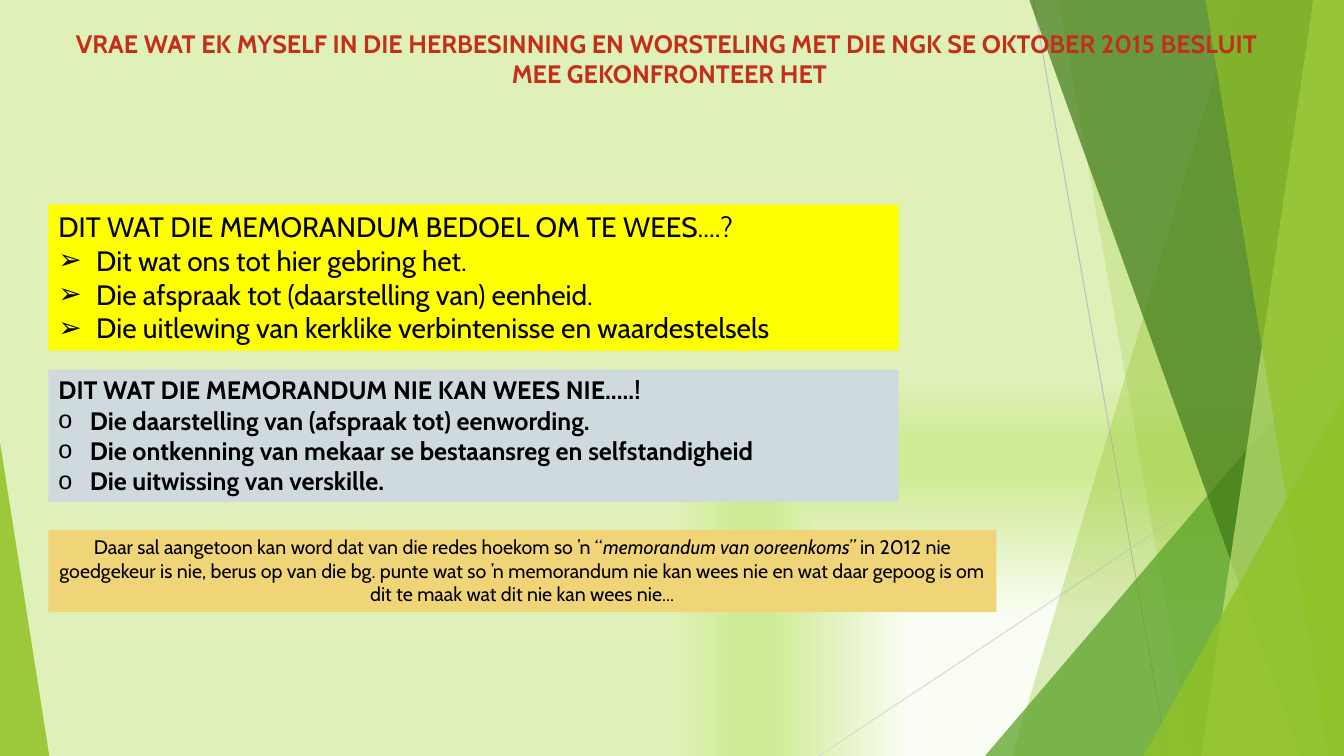
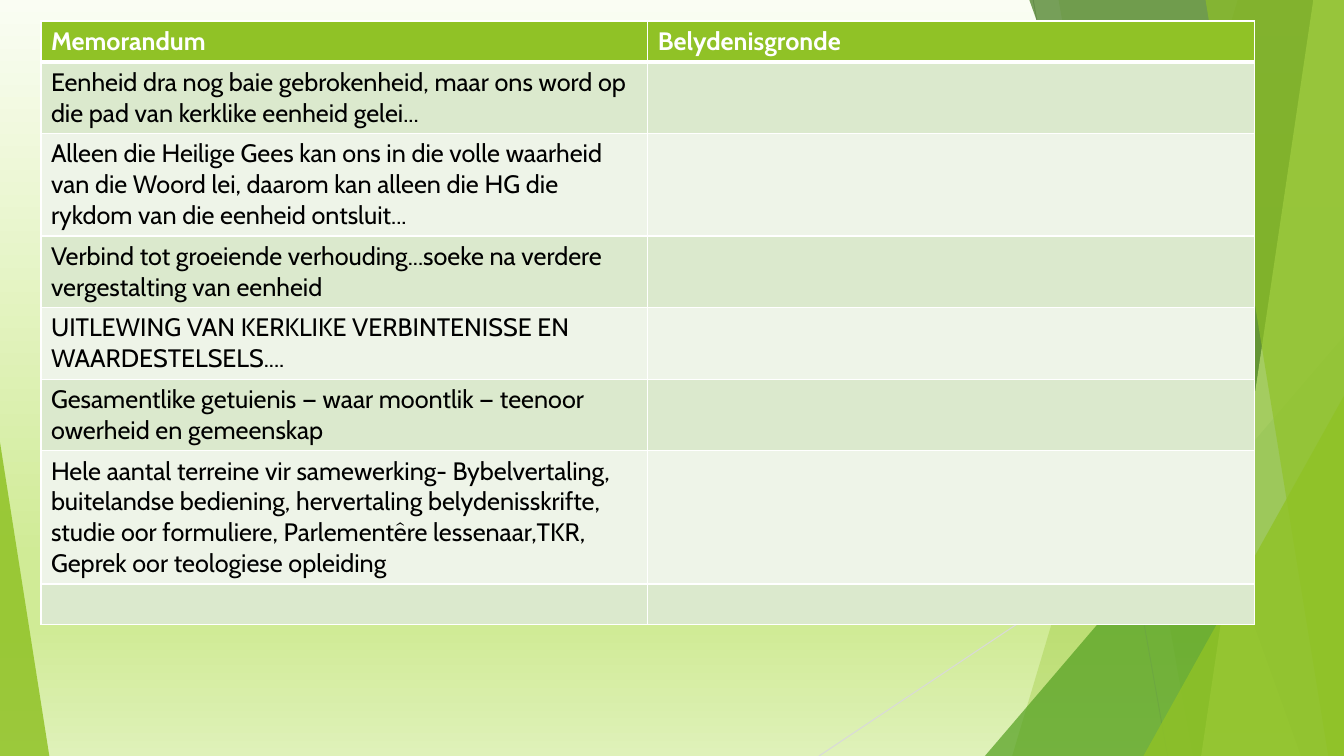
from dataclasses import dataclass

from lxml import etree
from pptx import Presentation
from pptx import util as u
from pptx.dml.color import RGBColor
from pptx.enum import shapes, text
from pptx.oxml import parse_xml
from pptx.oxml.ns import nsdecls, qn

PX = 9525  # EMU in one px
WIDTH, HEIGHT = 1280, 720


# Theme: every colour and type size
@dataclass(frozen=True)
class Theme:
    font: str = "Cabin"
    title_size: int = 18
    large_size: int = 20
    text_size: int = 18
    note_size: int = 14
    black: str = "000000"
    white: str = "FFFFFF"
    title: str = "C42F1A"
    lime: str = "90C226"
    green: str = "54A021"
    forest: str = "3F7819"
    pale_lime: str = "C0E474"
    line_dark: str = "BFBFBF"
    line_light: str = "D9D9D9"
    yellow: str = "FFFF00"
    grey: str = "CFDADF"
    sand: str = "F0D578"
    row_fills: tuple = ("EEF4E8", "DBE9CD")
    background: tuple = ("FAFDF3", "D0EB96", "D0EB96", "DFF1B9")


THEME = Theme()

# Facets on the master, from back to front
LINES = [
    (984, 0, 1112, HEIGHT, THEME.line_dark),
    (WIDTH, 387, 780, HEIGHT, THEME.line_light),
]
FACETS = [  # ("band", top x, bottom x) or ("triangle", left, top, width, apex)
    ("band", (1179, 964), THEME.lime, 30),
    ("band", (1008, 1136), THEME.lime, 20),
    ("triangle", (938, 320, 342, 1), THEME.green, 72),
    ("band", (980, 1239), THEME.forest, 70),
    ("band", (1251, 1144), THEME.pale_lime, 70),
    ("band", (1148, 1265), THEME.lime, 65),
    ("triangle", (1089, 377, 191, 1), THEME.lime, 80),
    ("triangle", (0, 421, 47, 0), THEME.lime, 85),
]

# Backgrounds: direction of the gradient
FROM_CORNER = '<a:path path="rect"><a:fillToRect l="100000" t="100000"/></a:path>'
DOWNWARD = '<a:lin ang="5400000" scaled="0"/>'

# Wording
TITLE = [
    "VRAE WAT EK MYSELF IN DIE HERBESINNING EN WORSTELING MET DIE NGK SE OKTOBER 2015 BESLUIT ",
    "MEE GEKONFRONTEER HET",
]
INTENDED = [
    "DIT WAT DIE MEMORANDUM BEDOEL OM TE WEES....?",
    "Dit wat ons tot hier gebring het.",
    "Die afspraak tot (daarstelling van) eenheid.",
    "Die uitlewing van kerklike verbintenisse en waardestelsels",
]
NOT_INTENDED = [
    "DIT WAT DIE MEMORANDUM NIE KAN WEES NIE.....!",
    "Die daarstelling van (afspraak tot) eenwording.",
    "Die ontkenning van mekaar se bestaansreg en selfstandigheid",
    "Die uitwissing van verskille.",
]
NOTE = [
    ("Daar sal aangetoon kan word dat van die redes hoekom so ’n “", False),
    ("memorandum van ooreenkoms” ", True),
    ("in 2012 nie goedgekeur is nie, berus op van die bg. punte wat so ’n memorandum nie kan "
     "wees nie en wat daar gepoog is om dit te maak wat dit nie kan wees nie...", False),
]
TABLE = [
    ("Memorandum", "Belydenisgronde"),
    ("Eenheid dra nog baie gebrokenheid, maar ons word op die pad van kerklike eenheid gelei...", ""),
    ("Alleen die Heilige Gees kan ons in die volle waarheid van die Woord lei, daarom kan alleen "
     "die HG die rykdom van die eenheid ontsluit...", ""),
    ("Verbind tot groeiende verhouding...soeke na verdere vergestalting van eenheid", ""),
    ("UITLEWING VAN KERKLIKE VERBINTENISSE EN WAARDESTELSELS....", ""),
    ("Gesamentlike getuienis — waar moontlik — teenoor owerheid en gemeenskap", ""),
    ("Hele aantal terreine vir samewerking- Bybelvertaling, buitelandse bediening, hervertaling "
     "belydenisskrifte, studie oor formuliere, Parlementêre lessenaar,TKR, Geprek oor teologiese "
     "opleiding", ""),
    ("", ""),
]


# Helpers
def px(*lengths):
    return [u.Emu(length * PX) for length in lengths]


def set_values(target, **values):
    for name, value in values.items():
        setattr(target, name, value)


def fill_solid(fill, color):
    fill.solid()
    fill.fore_color.rgb = RGBColor.from_string(color)


def add_run(paragraph, wording, size, color=THEME.black, bold=False, italic=False):
    run = paragraph.add_run()
    run.text = wording
    set_values(run.font, name=THEME.font, size=u.Pt(size), bold=bold, italic=italic)
    run.font.color.rgb = RGBColor.from_string(color)


def set_bullet(paragraph, bullet, indent):
    properties = paragraph._p.get_or_add_pPr()
    properties.set("marL", str(indent * PX))
    properties.set("indent", str(-indent * PX))
    if bullet:
        etree.SubElement(properties, qn("a:buChar")).set("char", bullet)
    else:
        etree.SubElement(properties, qn("a:buNone"))


def place(shape, box):
    set_values(shape, **dict(zip(("left", "top", "width", "height"), px(*box))))
    set_values(shape.text_frame, word_wrap=True, auto_size=text.MSO_AUTO_SIZE.NONE,
               vertical_anchor=text.MSO_ANCHOR.TOP)


def paragraphs_for(shape, count):
    frame = shape.text_frame
    for _ in range(count - 1):
        frame.add_paragraph()
    for paragraph in frame.paragraphs:
        set_values(paragraph, space_before=u.Pt(0), space_after=u.Pt(0))
    return frame.paragraphs


# Shared background
def set_background(slide, stops, direction):
    marks = "".join(
        f'<a:gs pos="{stop * 1000}"><a:srgbClr val="{color}"/></a:gs>'
        for stop, color in zip(stops, THEME.background))
    background = parse_xml(
        f'<p:bg {nsdecls("p", "a")}><p:bgPr><a:gradFill rotWithShape="1">'
        f'<a:gsLst>{marks}</a:gsLst>{direction}</a:gradFill><a:effectLst/></p:bgPr></p:bg>')
    slide.element.find(qn("p:cSld")).insert(0, background)


def add_line(group, start_x, start_y, end_x, end_y, color):
    line = group.shapes.add_connector(
        shapes.MSO_CONNECTOR.STRAIGHT, *px(start_x, start_y, end_x, end_y))
    line.line.color.rgb = RGBColor.from_string(color)
    line.line.width = u.Pt(0.75)
    etree.SubElement(line.element.spPr, qn("a:effectLst"))


def add_band(group, top_x, bottom_x):
    builder = group.shapes.build_freeform(*px(top_x, -1), scale=1.0)
    corners = [(WIDTH, -1), (WIDTH, HEIGHT), (bottom_x, HEIGHT)]
    builder.add_line_segments([px(*corner) for corner in corners], close=True)
    return builder.convert_to_shape()


def add_triangle(group, left, top, width, apex):
    triangle = group.shapes.add_shape(
        shapes.MSO_SHAPE.ISOSCELES_TRIANGLE, *px(left, top, width, HEIGHT - top))
    triangle.adjustments[0] = apex
    return triangle


def add_facets(master, slide):
    """Draw the facets as one group and hand it to the master."""
    group = slide.shapes.add_group_shape()
    for line in LINES:
        add_line(group, *line)
    draw = {"band": add_band, "triangle": add_triangle}
    for kind, geometry, color, opacity in FACETS:
        facet = draw[kind](group, *geometry)
        fill_solid(facet.fill, color)
        facet.line.fill.background()
        facet.shadow.inherit = False
        tint = facet.element.spPr.find(qn("a:solidFill"))[0]
        etree.SubElement(tint, qn("a:alpha")).set("val", str(opacity * 1000))
    for number, properties in enumerate(group.element.iter(qn("p:cNvPr")), 100):
        properties.set("id", str(number))
    master.shapes.element.insert(2, group.element)


# Slide elements
def write_title(slide, lines):
    title = slide.shapes.title
    place(title, (21, 22, 1233, 68))
    for paragraph, line in zip(paragraphs_for(title, len(lines)), lines):
        paragraph.alignment = text.PP_ALIGN.CENTER
        add_run(paragraph, line, THEME.title_size, THEME.title, bold=True)


def write_list(placeholder, box, lines, fill, size, bullet, indent, bold=False):
    place(placeholder, box)
    fill_solid(placeholder.fill, fill)
    for index, paragraph in enumerate(paragraphs_for(placeholder, len(lines))):
        set_bullet(paragraph, bullet if index else None, indent if index else 0)
        add_run(paragraph, lines[index], size, bold=bold)


def add_note(slide, box, runs):
    note = slide.shapes.add_textbox(*px(*box))
    place(note, box)
    fill_solid(note.fill, THEME.sand)
    paragraph = note.text_frame.paragraphs[0]
    paragraph.alignment = text.PP_ALIGN.CENTER
    for wording, italic in runs:
        add_run(paragraph, wording, THEME.note_size, italic=italic)


def set_borders(cell, **widths):
    properties = cell._tc.get_or_add_tcPr()
    for index, (side, width) in enumerate(widths.items()):
        properties.insert(index, parse_xml(
            f'<a:ln{side} {nsdecls("a")} w="{u.Pt(width)}"><a:solidFill>'
            f'<a:srgbClr val="{THEME.white}"/></a:solidFill></a:ln{side}>'))


def add_comparison(slide, rows, left, top, column_width, row_height):
    columns = len(rows[0])
    table = slide.shapes.add_table(
        len(rows), columns,
        *px(left, top, columns * column_width, len(rows) * row_height)).table
    for row, wordings in enumerate(rows):
        header = row == 0
        for column, wording in enumerate(wordings):
            cell = table.cell(row, column)
            fill_solid(cell.fill, THEME.lime if header else THEME.row_fills[row % 2])
            set_borders(cell, L=1, R=1, T=3 if row == 1 else 1, B=3 if header else 1)
            if wording:
                add_run(cell.text_frame.paragraphs[0], wording, THEME.text_size,
                        THEME.white if header else THEME.black, bold=header)


# Slides
def build_questions(slide):
    set_background(slide, (37, 74, 83, 100), FROM_CORNER)
    write_title(slide, TITLE)
    write_list(slide.placeholders[1], (46, 195, 810, 139), INTENDED,
               THEME.yellow, THEME.large_size, "➢", 36)
    write_list(slide.placeholders[2], (46, 352, 810, 126), NOT_INTENDED,
               THEME.grey, THEME.text_size, "o", 30, bold=True)
    add_note(slide, (46, 505, 903, 78), NOTE)


def build_comparison(slide):
    set_background(slide, (0, 74, 83, 100), DOWNWARD)
    add_comparison(slide, TABLE, left=39, top=20, column_width=578, row_height=39)


def main():
    presentation = Presentation()
    set_values(presentation, slide_width=u.Emu(WIDTH * PX), slide_height=u.Emu(HEIGHT * PX))
    layouts = presentation.slide_layouts
    questions = presentation.slides.add_slide(layouts.get_by_name("Two Content"))
    comparison = presentation.slides.add_slide(layouts.get_by_name("Blank"))
    add_facets(presentation.slide_master, questions)
    build_questions(questions)
    build_comparison(comparison)
    presentation.save("out.pptx")


if __name__ == "__main__":
    main()
